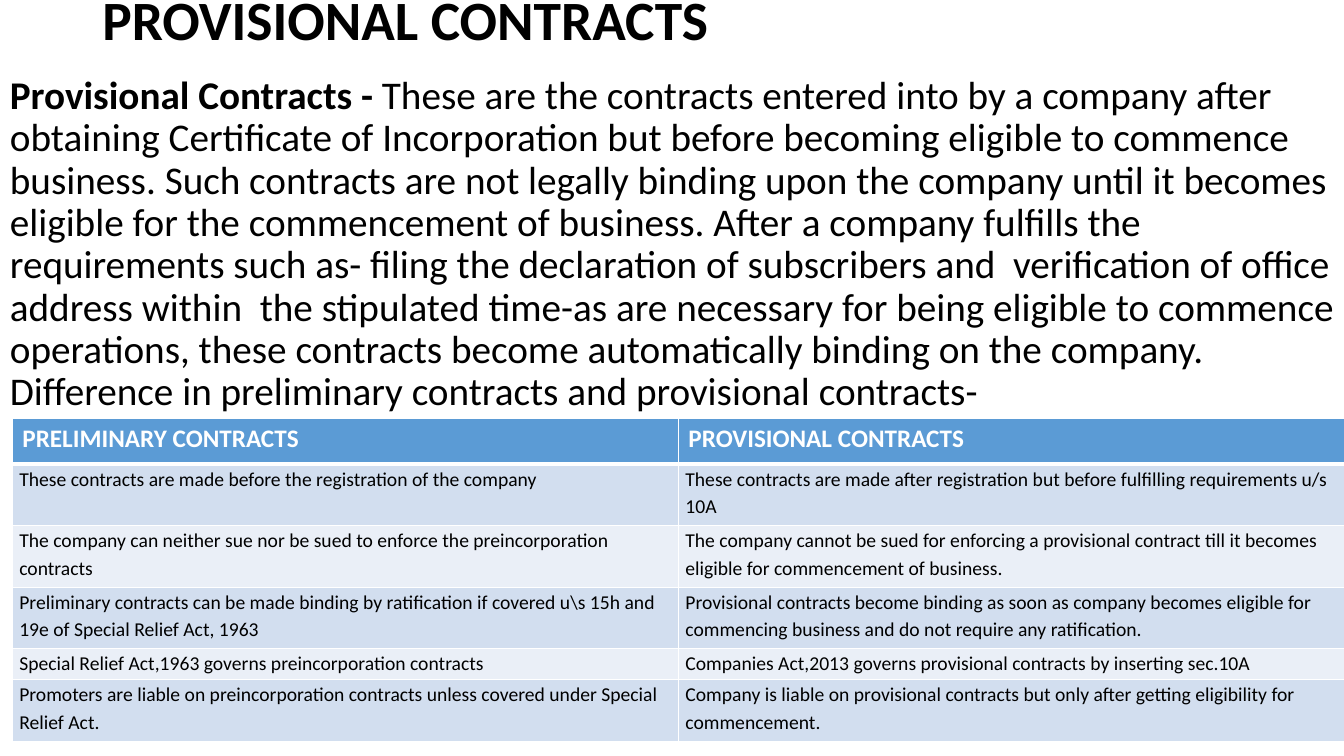
from dataclasses import dataclass

from lxml.etree import SubElement
from pptx import Presentation
from pptx.dml.color import RGBColor
from pptx.enum.text import MSO_ANCHOR as Anchor
from pptx.oxml.ns import qn
from pptx.util import Pt


@dataclass(frozen=True)
class Theme:
    font: str = "Calibri"
    text: str = "000000"
    white: str = "FFFFFF"
    header: str = "5B9BD5"
    bands: tuple = ("D2DEEF", "EAEFF7")
    title_size: float = 39.6
    body_size: float = 28
    header_size: float = 18
    cell_size: float = 14


THEME = Theme()

TITLE = "PROVISIONAL CONTRACTS"
TERM = "Provisional Contracts - "
DEFINITION = (
    "These are the contracts entered into by a company after obtaining Certificate of "
    "Incorporation but before becoming eligible to commence business. Such contracts are "
    "not legally binding upon the company until it becomes eligible for the commencement "
    "of business. After a company fulfills the requirements such as- filing the declaration "
    "of subscribers and  verification of office address within  the stipulated time-as are "
    "necessary for being eligible to commence operations, these contracts become "
    "automatically binding on the company. Difference in preliminary contracts and "
    "provisional contracts-"
)
HEADINGS = ("PRELIMINARY CONTRACTS", "PROVISIONAL CONTRACTS")
# Each row: height, preliminary contracts, provisional contracts
COMPARISON = [
    (44, "These contracts are made before the registration of the company",
     "These contracts are made after registration but before fulfilling requirements u/s 10A"),
    (44, "The company can neither sue nor be sued to enforce the preincorporation contracts",
     "The company cannot be sued for enforcing a provisional contract till it becomes "
     "eligible for commencement of business."),
    (44, "Preliminary contracts can be made binding by ratification if covered u\\s 15h and "
     "19e of Special Relief Act, 1963",
     "Provisional contracts become binding as soon as company becomes eligible for "
     "commencing business and do not require any ratification."),
    (22, "Special Relief Act,1963 governs preincorporation contracts",
     "Companies Act,2013 governs provisional contracts by inserting sec.10A"),
    (44, "Promoters are liable on preincorporation contracts unless covered under Special "
     "Relief Act.",
     "Company is liable on provisional contracts but only after getting eligibility for "
     "commencement."),
]


def add_text(paragraph, text, *, size, color=THEME.text, bold=False,
             line_spacing=None, before=None, after=None):
    """Append a run and set the given paragraph spacing."""
    run = paragraph.add_run()
    run.text = text
    run.font.name = THEME.font
    run.font.size = Pt(size)
    run.font.bold = bold
    run.font.color.rgb = RGBColor.from_string(color)
    if line_spacing is not None:
        paragraph.line_spacing = line_spacing
    if before is not None:
        paragraph.space_before = Pt(before)
    if after is not None:
        paragraph.space_after = Pt(after)


def add_box(slide, left, top, width, height, anchor=Anchor.TOP):
    """Add a wrapping text box and return its first paragraph."""
    frame = slide.shapes.add_textbox(Pt(left), Pt(top), Pt(width), Pt(height)).text_frame
    frame.word_wrap = True
    frame.vertical_anchor = anchor
    return frame.paragraphs[0]


def style_cell(cell, fill, bottom=1):
    """Fill a cell and give it white borders."""
    properties = cell._tc.get_or_add_tcPr()
    for side, width in (("L", 1), ("R", 1), ("T", 1), ("B", bottom)):
        line = SubElement(properties, qn(f"a:ln{side}"), w=str(Pt(width)))
        solid = SubElement(line, qn("a:solidFill"))
        SubElement(solid, qn("a:srgbClr"), val=THEME.white)
    cell.fill.solid()
    cell.fill.fore_color.rgb = RGBColor.from_string(fill)


def add_comparison(slide, left, top, column_width, header_height):
    heights = [header_height] + [row[0] for row in COMPARISON]
    table = slide.shapes.add_table(
        len(heights), len(HEADINGS), Pt(left), Pt(top),
        Pt(column_width * len(HEADINGS)), Pt(sum(heights))).table
    for column in table.columns:
        column.width = Pt(column_width)
    for row, height in zip(table.rows, heights):
        row.height = Pt(height)

    # Header row
    for cell, heading in zip(table.rows[0].cells, HEADINGS):
        style_cell(cell, THEME.header, bottom=3)
        add_text(cell.text_frame.paragraphs[0], heading,
                 size=THEME.header_size, color=THEME.white, bold=True)

    # Banded rows
    for index, (_, *texts) in enumerate(COMPARISON):
        for cell, text in zip(table.rows[index + 1].cells, texts):
            style_cell(cell, THEME.bands[index % 2])
            cell.margin_left = cell.margin_right = Pt(5)
            cell.margin_top = cell.margin_bottom = Pt(0)
            add_text(cell.text_frame.paragraphs[0], text,
                     size=THEME.cell_size, line_spacing=1.15, after=10)


def main():
    presentation = Presentation()
    presentation.slide_width, presentation.slide_height = Pt(960), Pt(540)
    slide = presentation.slides.add_slide(presentation.slide_layouts[6])

    # Title
    title = add_box(slide, 66, 0, 828, 32.4, Anchor.MIDDLE)
    add_text(title, TITLE, size=THEME.title_size, bold=True, line_spacing=0.9)

    # Definition
    body = add_box(slide, 0, 50.4, 960, 489.6)
    add_text(body, TERM, size=THEME.body_size, bold=True, line_spacing=0.9, before=10)
    add_text(body, DEFINITION, size=THEME.body_size)

    # Comparison table
    add_comparison(slide, 8.8, 299, 475.8, 32.4)
    presentation.save("out.pptx")


if __name__ == "__main__":
    main()
